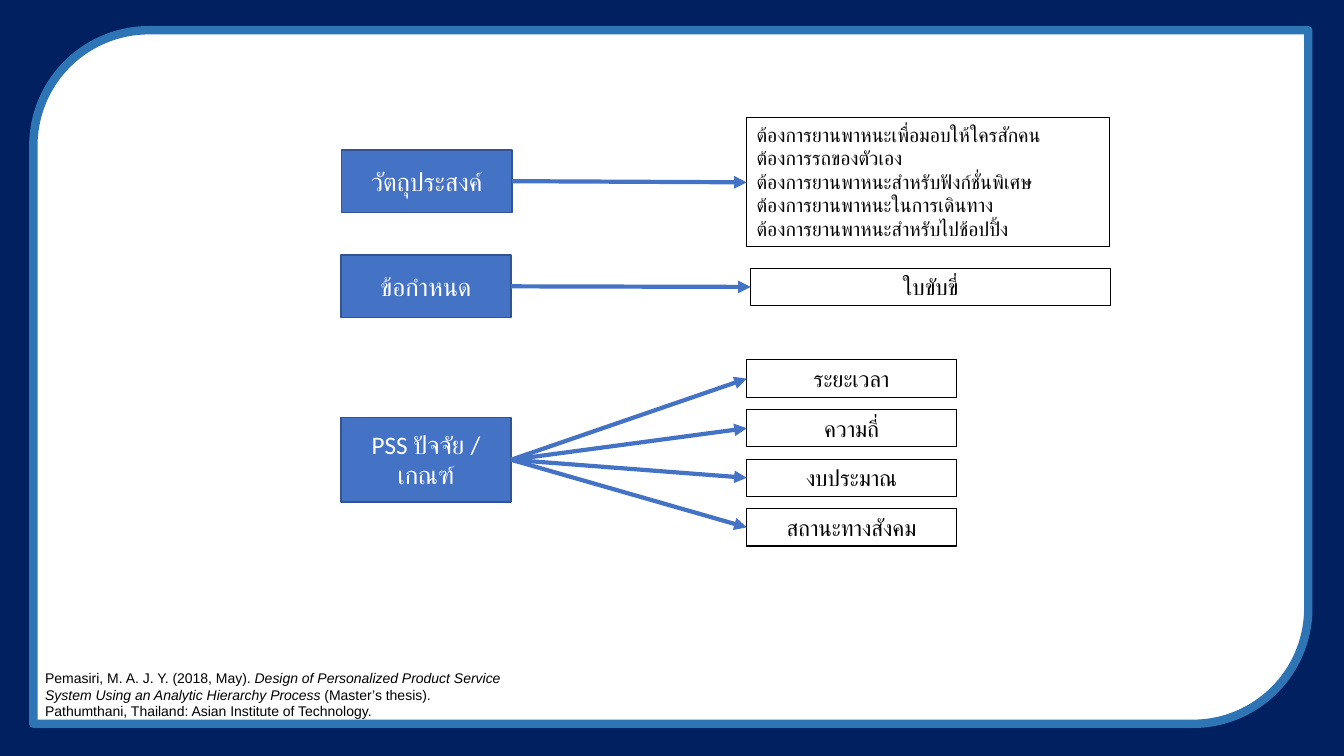
import dataclasses
import typing

import pptx
import pptx.dml.color
import pptx.enum.shapes
import pptx.enum.text
import pptx.oxml
import pptx.oxml.ns
import pptx.util

Cm = pptx.util.Cm
Pt = pptx.util.Pt
KIND = pptx.enum.shapes.MSO_SHAPE
ALIGN = pptx.enum.text.PP_ALIGN
ANCHOR = pptx.enum.text.MSO_ANCHOR
FIT = pptx.enum.text.MSO_AUTO_SIZE

WIDE, HIGH = 33.87, 19.05
NAVY, SKY, BLUE, EDGE = "002060", "2E75B6", "4472C4", "325491"
WHITE, BLACK = "FFFFFF", "000000"


@dataclasses.dataclass
class Box:
    left: float
    top: float
    width: float
    height: float
    lines: tuple[str, ...] = ()
    size: float = 16
    fill: typing.Optional[str] = None
    edge: typing.Optional[str] = BLACK
    weight: float = 0.75
    ink: str = BLACK
    align: typing.Any = ALIGN.CENTER
    anchor: typing.Any = ANCHOR.MIDDLE
    fit: typing.Any = FIT.SHAPE_TO_FIT_TEXT
    kind: typing.Any = KIND.RECTANGLE
    turn: float = 0


def color(code: str) -> pptx.dml.color.RGBColor:
    return pptx.dml.color.RGBColor.from_string(code)


def style(item: typing.Any, form: dict[str, typing.Any]) -> None:
    for name, value in form.items():
        setattr(item, name, value)


def paint(part: typing.Any, code: typing.Optional[str]) -> None:
    """Give a fill a solid colour, or none."""
    if code is None:
        part.background()
    else:
        part.solid()
        part.fore_color.rgb = color(code)


def draw(slide: typing.Any, box: Box) -> typing.Any:
    shape = slide.shapes.add_shape(
        box.kind, Cm(box.left), Cm(box.top), Cm(box.width), Cm(box.height))
    shape.shadow.inherit = False
    shape.rotation = box.turn
    paint(shape.fill, box.fill)
    paint(shape.line.fill, box.edge)
    if box.edge:
        shape.line.width = Pt(box.weight)
    if box.lines:
        frame = shape.text_frame
        frame.text = "\n".join(box.lines)
        style(frame, {"word_wrap": True, "auto_size": box.fit,
                      "vertical_anchor": box.anchor})
        for para in frame.paragraphs:
            para.alignment = box.align
            for run in para.runs:
                style(run.font, {"name": "Calibri", "size": Pt(box.size)})
                run.font.color.rgb = color(box.ink)
    return shape


def link(slide: typing.Any, start: typing.Any, end: typing.Any) -> None:
    """Arrow from the right side of one box to the left side of another."""
    wire = slide.shapes.add_connector(
        pptx.enum.shapes.MSO_CONNECTOR.STRAIGHT, 0, 0, 0, 0)
    wire.begin_connect(start, 3)
    wire.end_connect(end, 1)
    wire.line.width = Pt(3)
    wire.line.color.rgb = color(BLUE)
    space = pptx.oxml.ns.nsdecls("a")
    wire.line._get_or_add_ln().append(
        pptx.oxml.parse_xml(f'<a:tailEnd {space} type="triangle"/>'))
    wire._element.spPr.append(pptx.oxml.parse_xml(f"<a:effectLst {space}/>"))


def label(text: str, left: float, top: float, height: float) -> Box:
    return Box(left, top, 4.29, height, (text,), 18, BLUE, EDGE, 1, WHITE,
               fit=FIT.NONE)


def cite(slide: typing.Any) -> None:
    note = slide.shapes.add_textbox(Cm(0.89), Cm(16.74), Cm(12.24), Cm(1.55))
    style(note.text_frame, {"word_wrap": True,
                            "auto_size": FIT.SHAPE_TO_FIT_TEXT})
    para = note.text_frame.paragraphs[0]
    for text, slant in (
        ("Pemasiri, M. A. J. Y. (2018, May). ", False),
        ("Design of Personalized Product Service System Using an "
         "Analytic Hierarchy Process ", True),
        ("(Master’s thesis). Pathumthani, Thailand: "
         "Asian Institute of Technology.", False),
    ):
        run = para.add_run()
        run.text = text
        style(run.font, {"name": "Arial", "size": Pt(10), "italic": slant})
        run.font.color.rgb = color(BLACK)


def main() -> None:
    deck = pptx.Presentation()
    style(deck, {"slide_width": Cm(WIDE), "slide_height": Cm(HIGH)})
    slide = deck.slides.add_slide(deck.slide_layouts[6])

    # Backdrop and rounded panel
    draw(slide, Box(0, 0, WIDE, HIGH, fill=NAVY, edge=None))
    draw(slide, Box(0.84, 0.76, 32.13, 17.48, fill=WHITE, edge=SKY, weight=6,
                    kind=KIND.ROUND_2_DIAG_RECTANGLE, turn=180))

    # Each label with the boxes it points to
    needs = Box(18.82, 2.97, 9.14, 3.25, (
        "ต้องการยานพาหนะเพื่อมอบให้ใครสักคน",
        "ต้องการรถของตัวเอง",
        "ต้องการยานพาหนะสำหรับฟังก์ชั่นพิเศษ",
        "ต้องการยานพาหนะในการเดินทาง",
        "ต้องการยานพาหนะสำหรับไปช้อปปิ้ง",
    ), 14, align=ALIGN.LEFT, anchor=ANCHOR.TOP)
    permit = Box(18.92, 6.76, 9.07, 0.94, ("ใบขับขี่",), anchor=ANCHOR.TOP)
    factors = [
        Box(18.82, 9.07 + 1.25 * row, 5.28, 0.94, (text,))
        for row, text in enumerate(
            ("ระยะเวลา", "ความถี่", "งบประมาณ", "สถานะทางสังคม"))
    ]
    groups = (
        (label("วัตถุประสงค์", 8.61, 3.78, 1.57), [needs]),
        (label("ข้อกำหนด", 8.59, 6.43, 1.57), [permit]),
        (label("PSS ปัจจัย / เกณฑ์", 8.59, 10.52, 2.13), factors),
    )
    for head, goals in groups:
        start = draw(slide, head)
        for goal in goals:
            link(slide, start, draw(slide, goal))

    # Source note
    cite(slide)
    deck.save("out.pptx")


if __name__ == "__main__":
    main()
